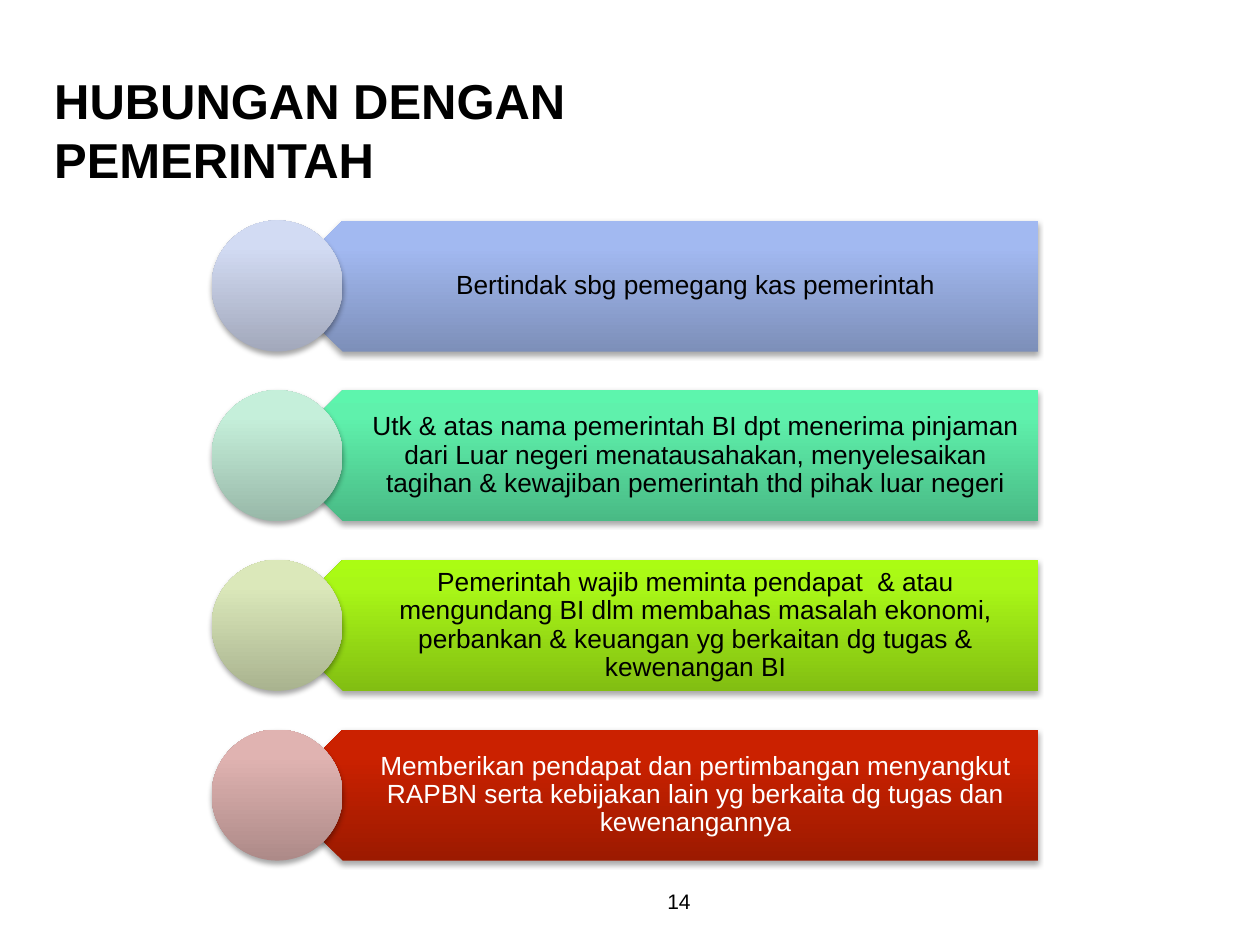
from lxml import etree
from pptx import Presentation
from pptx import util as u
from pptx.dml.color import RGBColor
from pptx.enum import shapes, text
from pptx.oxml import ns

WIDTH, HEIGHT = 10, 7.5
DUTIES = [
    ("Bertindak sbg pemegang kas pemerintah", "000000",
     ("7D8FB9", "A2B9F1", "A2B9F3"), ("A2A8BB", "D2DBF3", "D2DBF5")),
    ("Utk & atas nama pemerintah BI dpt menerima pinjaman dari Luar negeri "
     "menatausahakan, menyelesaikan tagihan & kewajiban pemerintah thd pihak luar negeri",
     "000000", ("49BA85", "5FF1AC", "5DF5AD"), ("98B8A8", "C5EFDA", "C5F1DB")),
    ("Pemerintah wajib meminta pendapat  & atau mengundang BI dlm membahas masalah "
     "ekonomi, perbankan & keuangan yg berkaitan dg tugas & kewenangan BI",
     "000000", ("82BE12", "A9F717", "ABFC13"), ("A9B38F", "DBE8BA", "DDEABA")),
    ("Memberikan pendapat dan pertimbangan menyangkut RAPBN serta kebijakan lain yg "
     "berkaita dg tugas dan kewenangannya",
     "FFFFFF", ("9C1A00", "CB2100", "CB2100"), ("AD8A88", "E0B3B1", "E2B3B1")),
]


def color(value):
    return RGBColor.from_string(value)


def inches(*lengths):
    return [u.Inches(length) for length in lengths]


def write(shape, wording, size, shade="000000", bold=False, align=text.PP_ALIGN.LEFT,
          anchor=text.MSO_ANCHOR.MIDDLE, insets=(0.1, 0.05, 0.1, 0.05), spacing=1.0):
    frame = shape.text_frame
    frame.word_wrap = True
    frame.auto_size = text.MSO_AUTO_SIZE.NONE
    frame.vertical_anchor = anchor
    (frame.margin_left, frame.margin_top,
     frame.margin_right, frame.margin_bottom) = inches(*insets)
    paragraph = frame.paragraphs[0]
    paragraph.alignment = align
    paragraph.line_spacing = spacing
    run = paragraph.add_run()
    run.text = wording
    run.font.name, run.font.size, run.font.bold = "Arial", u.Pt(size), bold
    run.font.color.rgb = color(shade)


def shade_shape(shape, tones):
    shape.line.fill.background()
    shape.fill.background()
    properties = shape.fill._xPr
    stops = "".join(
        f'<a:gs pos="{share * 1000}"><a:srgbClr val="{tone}"/></a:gs>'
        for share, tone in zip((0, 80, 100), tones))
    gradient = etree.fromstring(
        f'<a:gradFill {ns.nsdecls("a")} rotWithShape="0"><a:gsLst>{stops}</a:gsLst>'
        '<a:lin ang="16200000" scaled="0"/></a:gradFill>')
    properties.replace(properties.find(ns.qn("a:noFill")), gradient)
    properties.append(etree.fromstring(
        f'<a:effectLst {ns.nsdecls("a")}><a:outerShdw blurRad="{u.Pt(3.1)}" '
        f'dist="{u.Pt(1.8)}" dir="5400000" rotWithShape="0"><a:srgbClr val="000000">'
        '<a:alpha val="35000"/></a:srgbClr></a:outerShdw></a:effectLst>'))


def add_title(slide, left, top, width, height):
    title = slide.shapes.title
    title.left, title.top, title.width, title.height = inches(left, top, width, height)
    write(title, "HUBUNGAN DENGAN PEMERINTAH", 28, bold=True)


def add_duty(group, left, top, width, height, duty):
    wording, ink, plate_tones, disc_tones = duty
    radius = height / 2
    plate = group.shapes.add_shape(
        shapes.MSO_SHAPE.PENTAGON,
        *inches(left + radius, top, width - radius, height))
    plate.rotation = 180
    shade_shape(plate, plate_tones)
    label = group.shapes.add_textbox(
        *inches(left + height * 0.75, top, width - height * 0.75, height))
    write(label, wording, 15, ink, align=text.PP_ALIGN.CENTER,
          insets=(0.46, 0.06, 0.12, 0.06), spacing=0.9)
    disc = group.shapes.add_shape(
        shapes.MSO_SHAPE.OVAL, *inches(left, top, height, height))
    shade_shape(disc, disc_tones)


def add_duties(slide, left, top, width, height):
    group = slide.shapes.add_group_shape()
    row = 1.04
    pitch = (height - row) / (len(DUTIES) - 1)
    for index, duty in enumerate(DUTIES):
        add_duty(group, left, top + index * pitch, width, row, duty)


def add_page_number(slide, left, top, width, height):
    number = slide.shapes.add_textbox(*inches(left, top, width, height))
    write(number, "14", 12, align=text.PP_ALIGN.RIGHT, anchor=text.MSO_ANCHOR.TOP)


def main():
    deck = Presentation()
    deck.slide_width, deck.slide_height = inches(WIDTH, HEIGHT)
    slide = deck.slides.add_slide(deck.slide_layouts[5])
    add_title(slide, 0.33, 0.72, 5.42, 0.62)
    add_duties(slide, 1.68, 1.75, 6.56, 5.08)
    add_page_number(slide, 3.25, 7, 2.33, 0.25)
    deck.save("out.pptx")


if __name__ == "__main__":
    main()
